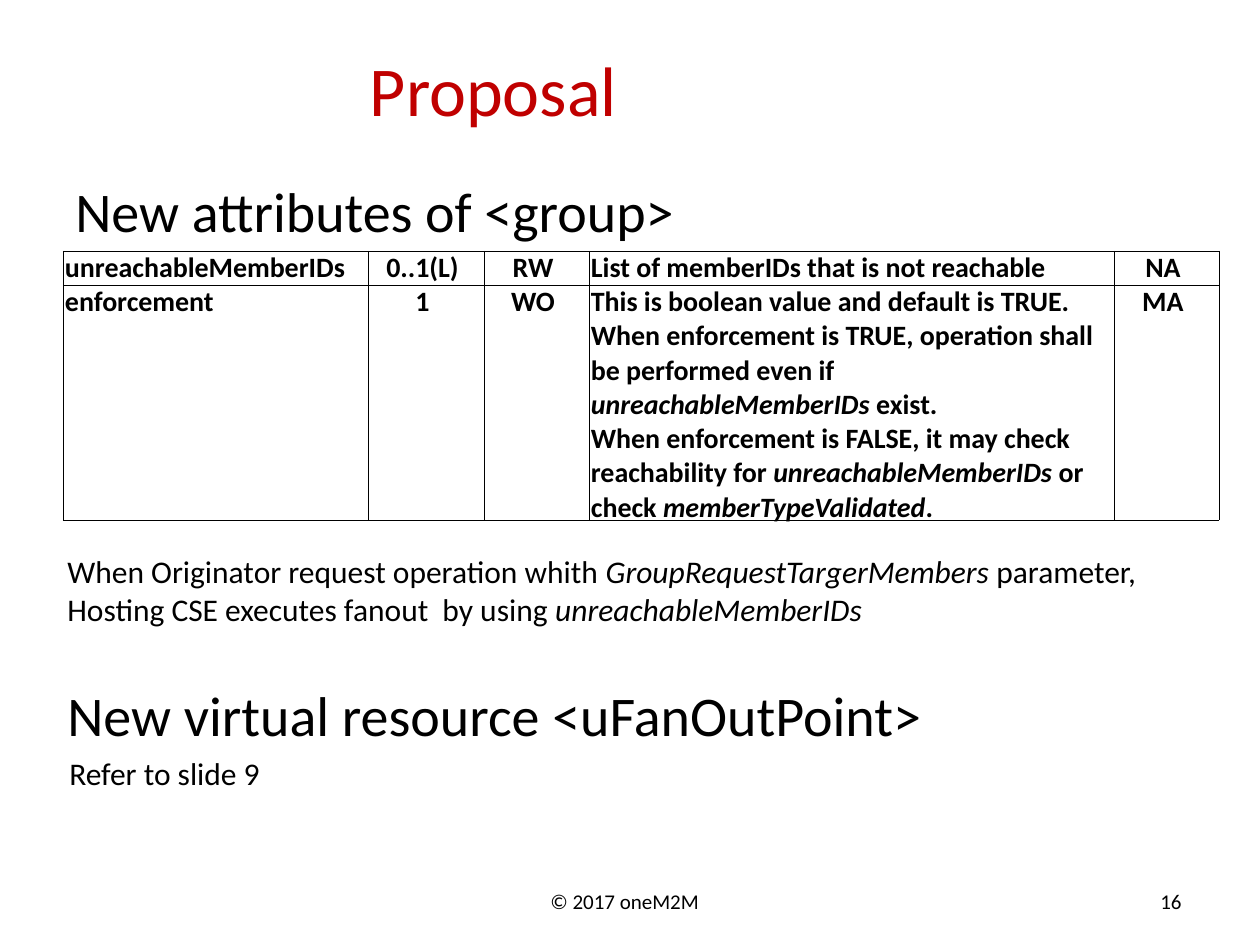
from lxml import etree
from pptx import Presentation, util as u
from pptx.dml.color import RGBColor
from pptx.enum import text as t
from pptx.oxml import ns

SCALE = 914400 / 126
FONT = "Calibri"
BLACK = RGBColor(0, 0, 0)
RED = RGBColor(0xC0, 0, 0)
LEFT, MID, RIGHT = t.PP_ALIGN.LEFT, t.PP_ALIGN.CENTER, t.PP_ALIGN.RIGHT
COLS = [305, 116, 105, 525, 105]
ROWS = [34, 235]
ALIGNS = [LEFT, MID, MID, LEFT, MID]
CELLS = [
    ["unreachableMemberIDs", "0..1(L)", "RW",
     "List of memberIDs that is not reachable", "NA"],
    ["enforcement", "1", "WO",
     [["This is boolean value and default is TRUE. When enforcement is TRUE, "
       "operation shall be performed even if ", "unreachableMemberIDs", " exist."],
      ["When enforcement is FALSE, it may check reachability for ",
       "unreachableMemberIDs", " or check ", "memberTypeValidated", "."]], "MA"],
]


def px(n):
    return u.Emu(round(n * SCALE))


def write(frame, words, size=18, color=BLACK, bold=False, align=LEFT, space=None):
    """Write a string, or paragraphs of runs where every second run is italic."""
    paras = [[words]] if isinstance(words, str) else words
    for n, runs in enumerate(paras):
        para = frame.add_paragraph() if n else frame.paragraphs[0]
        para.alignment = align
        para.line_spacing = space
        for k, part in enumerate(runs):
            run = para.add_run()
            run.text = part
            font = run.font
            font.name, font.size, font.bold = FONT, u.Pt(size), bold
            font.italic = k % 2 == 1
            font.color.rgb = color


def add_text(slide, box, words, wrap=False, **form):
    frame = slide.shapes.add_textbox(*map(px, box)).text_frame
    frame.word_wrap = wrap
    write(frame, words, **form)


def add_title(slide, box, words):
    title = slide.shapes.title
    title.left, title.top, title.width, title.height = map(px, box)
    frame = title.text_frame
    frame.vertical_anchor = t.MSO_ANCHOR.TOP
    frame.margin_right = px(44)
    write(frame, words, size=40, color=RED, align=MID, space=0.85)


def rule_cell(cell):
    cell.fill.background()
    props = cell._tc.get_or_add_tcPr()
    for n, side in enumerate(("lnL", "lnR", "lnT", "lnB")):
        line = etree.Element(ns.qn("a:" + side), w=str(u.Pt(0.25)))
        fill = etree.SubElement(line, ns.qn("a:solidFill"))
        etree.SubElement(fill, ns.qn("a:srgbClr"), val=str(BLACK))
        props.insert(n, line)


def add_grid(slide, left, top):
    box = map(px, (left, top, sum(COLS), sum(ROWS)))
    table = slide.shapes.add_table(len(ROWS), len(COLS), *box).table
    table.first_row = table.horz_banding = False
    for col, width in zip(table.columns, COLS):
        col.width = px(width)
    for row, height, words in zip(table.rows, ROWS, CELLS):
        row.height = px(height)
        for cell, part, align in zip(row.cells, words, ALIGNS):
            cell.margin_left, cell.margin_right = px(2), px(9)
            cell.margin_top = cell.margin_bottom = 0
            rule_cell(cell)
            write(cell.text_frame, part, size=16, bold=True, align=align)


def main():
    deck = Presentation()
    deck.slide_width, deck.slide_height = px(1260), px(945)
    slide = deck.slides.add_slide(deck.slide_layouts[5])
    add_text(slide, (538, 882, 176, 38), "© 2017 oneM2M", size=12)
    add_text(slide, (1144, 882, 50, 38), "16", size=12, align=RIGHT)
    add_title(slide, (10, 53, 998, 158), "Proposal")
    add_text(slide, (63, 170, 631, 81), "New attributes of <group>", size=32)
    add_grid(slide, 63, 251)
    add_text(slide, (55, 546, 1171, 89), [[
        "When Originator request operation whith ", "GroupRequestTargerMembers ",
        "parameter, Hosting CSE executes fanout  by using ",
        "unreachableMemberIDs"]], wrap=True)
    add_text(slide, (55, 674, 919, 81), "New virtual resource <uFanOutPoint>", size=32)
    add_text(slide, (57, 748, 1171, 50), "Refer to slide 9", wrap=True)
    deck.save("out.pptx")


if __name__ == "__main__":
    main()
